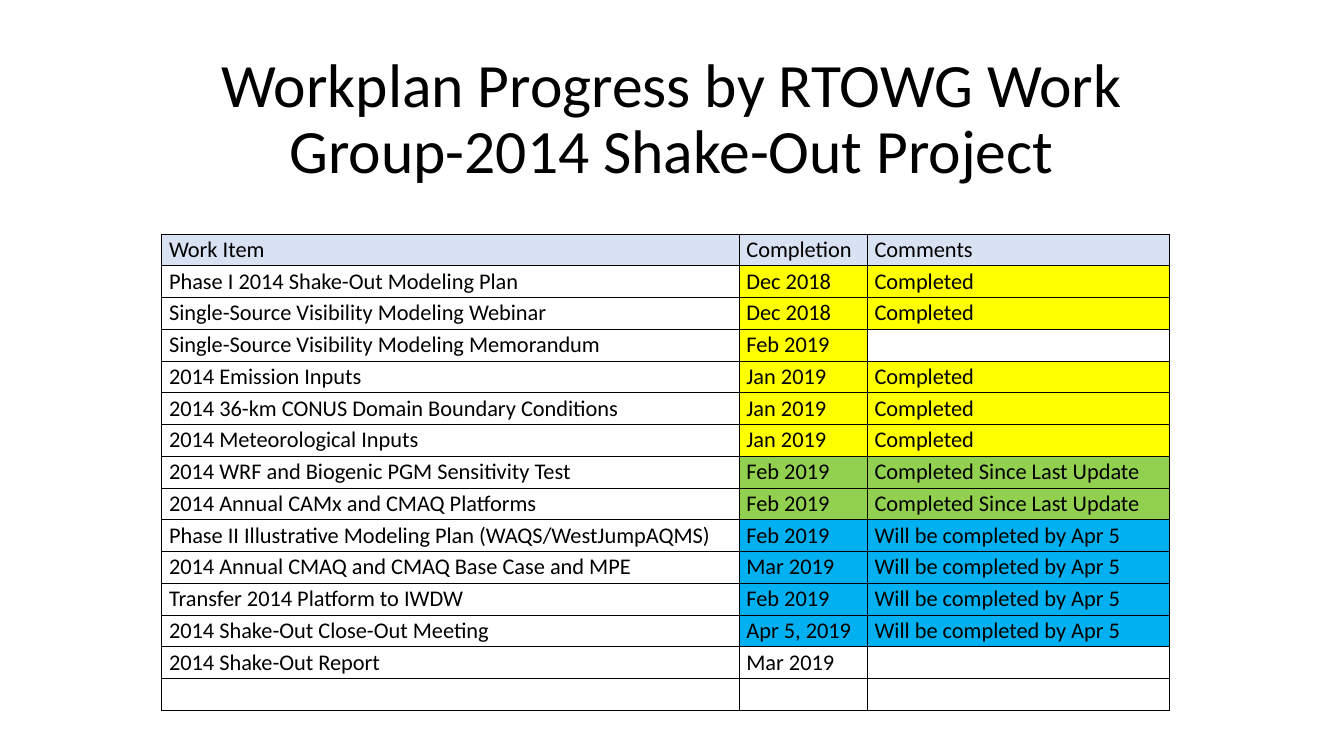
import pptx
import pptx.util
import pptx.dml.color
import pptx.enum.text
import pptx.oxml
import pptx.oxml.ns

Cm, Pt = pptx.util.Cm, pptx.util.Pt
Color = pptx.dml.color.RGBColor
Align = pptx.enum.text.PP_ALIGN
Anchor = pptx.enum.text.MSO_ANCHOR

# Content
TITLE = "Workplan Progress by RTOWG Work Group-2014 Shake-Out Project"
HEADS = ("Work Item", "Completion", "Comments")
DONE = "Completed"
NEW = "Completed Since Last Update"
DUE = "Will be completed by Apr 5"
ITEMS = [
    ("Phase I 2014 Shake-Out Modeling Plan", "Dec 2018", DONE),
    ("Single-Source Visibility Modeling Webinar", "Dec 2018", DONE),
    ("Single-Source Visibility Modeling Memorandum", "Feb 2019", ""),
    ("2014 Emission Inputs", "Jan 2019", DONE),
    ("2014 36-km CONUS Domain Boundary Conditions", "Jan 2019", DONE),
    ("2014 Meteorological Inputs", "Jan 2019", DONE),
    ("2014 WRF and Biogenic PGM Sensitivity Test", "Feb 2019", NEW),
    ("2014 Annual CAMx and CMAQ Platforms", "Feb 2019", NEW),
    ("Phase II Illustrative Modeling Plan (WAQS/WestJumpAQMS)", "Feb 2019", DUE),
    ("2014 Annual CMAQ and CMAQ Base Case and MPE", "Mar 2019", DUE),
    ("Transfer 2014 Platform to IWDW", "Feb 2019", DUE),
    ("2014 Shake-Out Close-Out Meeting", "Apr 5, 2019", DUE),
    ("2014 Shake-Out Report", "Mar 2019", ""),
    ("", "", ""),
]

# Colours and formats
BLACK = Color(0x00, 0x00, 0x00)
WHITE = Color(0xFF, 0xFF, 0xFF)
PALE = Color(0xD9, 0xE2, 0xF3)
YELLOW = Color(0xFF, 0xFF, 0x00)
GREEN = Color(0x92, 0xD0, 0x50)
BLUE = Color(0x00, 0xB0, 0xF0)
FILLS = {DONE: YELLOW, NEW: GREEN, DUE: BLUE}
EARLY = "Single-Source Visibility Modeling Memorandum"

WIDTHS = (14.55, 3.23, 7.62)
ROW = 0.8
PLACE = {"left": Cm(2.33), "top": Cm(1.01), "width": Cm(29.21), "height": Cm(4.06)}
INSETS = {"margin_left": Cm(0.18), "margin_right": Cm(0.18),
          "margin_top": 0, "margin_bottom": 0}
PLAIN = {"first_row": False, "horz_banding": False}


def apply(thing, values):
    for name, value in values.items():
        setattr(thing, name, value)


def write(para, text, size, line):
    para.line_spacing = line
    run = para.add_run()
    run.text = text
    apply(run.font, {"name": "Calibri", "size": Pt(size)})
    run.font.color.rgb = BLACK


def shade(row, col):
    """Status colour of a cell, or None where it stays clear."""
    if row == HEADS:
        return PALE
    if col == 0:
        return None
    if row[0] == EARLY:
        return YELLOW if col == 1 else WHITE
    return FILLS.get(row[2])


def border(cell):
    props = cell._tc.get_or_add_tcPr()
    for spot, side in enumerate(("lnL", "lnR", "lnT", "lnB")):
        props.insert(spot, pptx.oxml.parse_xml(
            f'<a:{side} {pptx.oxml.ns.nsdecls("a")} w="{Pt(1)}">'
            f'<a:solidFill><a:srgbClr val="{BLACK}"/></a:solidFill></a:{side}>'))


def main():
    deck = pptx.Presentation()
    apply(deck, {"slide_width": Cm(33.87), "slide_height": Cm(19.05)})
    slide = deck.slides.add_slide(deck.slide_layouts[5])

    # Title
    title = slide.shapes.title
    apply(title, PLACE)
    apply(title.text_frame, {"word_wrap": True, "vertical_anchor": Anchor.MIDDLE})
    para = title.text_frame.paragraphs[0]
    para.alignment = Align.CENTER
    write(para, TITLE, 44, 0.9)

    # Table
    rows = [HEADS] + ITEMS
    table = slide.shapes.add_table(
        len(rows), len(HEADS), Cm(4.08), Cm(5.9),
        Cm(sum(WIDTHS)), Cm(ROW * len(rows))).table
    apply(table, PLAIN)
    for col, width in zip(table.columns, WIDTHS):
        col.width = Cm(width)

    # Cells
    for r, row in enumerate(rows):
        table.rows[r].height = Cm(ROW)
        for c, text in enumerate(row):
            cell = table.cell(r, c)
            apply(cell, INSETS)
            color = shade(row, c)
            if color is None:
                cell.fill.background()
            else:
                cell.fill.solid()
                cell.fill.fore_color.rgb = color
            border(cell)
            if text:
                write(cell.text_frame.paragraphs[0], text, 16, 1.07)

    deck.save("out.pptx")


if __name__ == "__main__":
    main()
